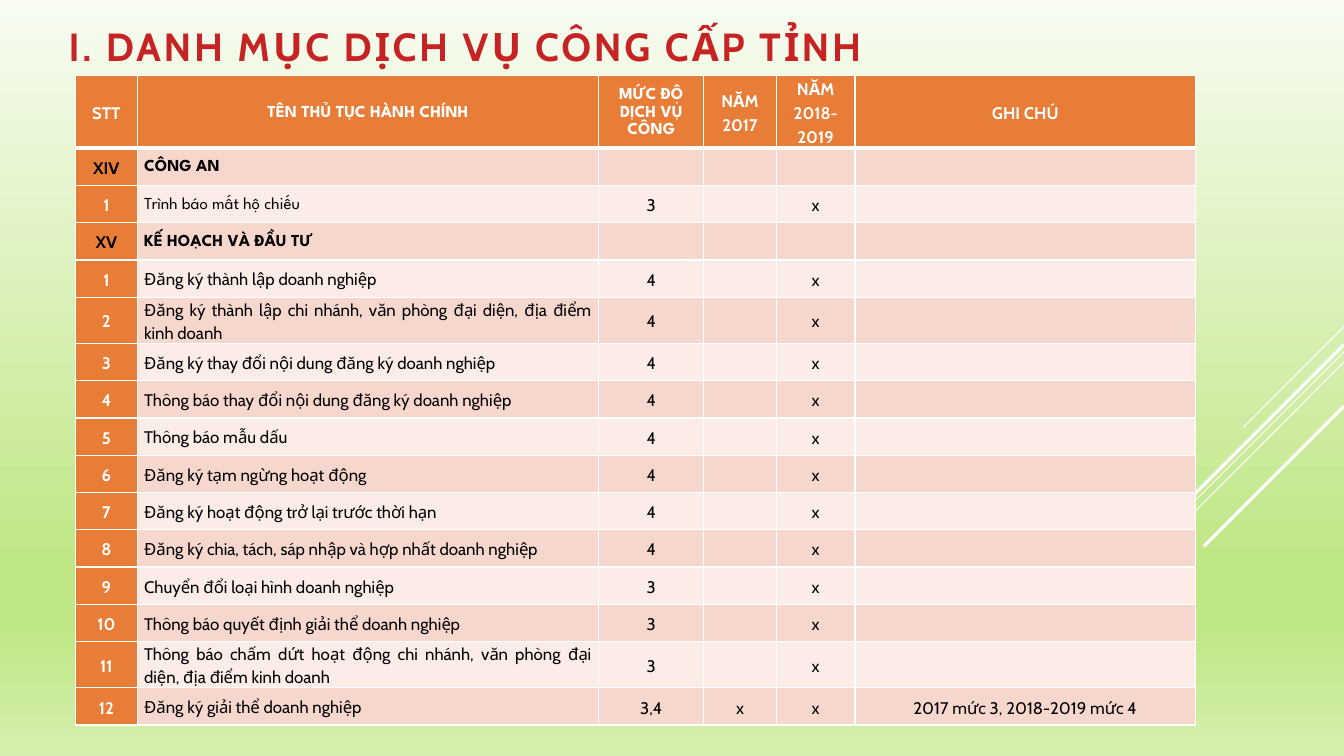
from pptx import Presentation
from pptx import util as u
from pptx.dml.color import RGBColor
from pptx.enum import shapes, text
from pptx.oxml import parse_xml
from pptx.oxml.ns import nsdecls, qn

PX = 9144  # 100 px to the inch
WHITE = RGBColor(0xFF, 0xFF, 0xFF)
BLACK = RGBColor(0, 0, 0)
RED = RGBColor(0xC6, 0x23, 0x24)
ORANGE = RGBColor(0xE8, 0x7D, 0x37)
ROSE = RGBColor(0xF6, 0xD7, 0xCE)
PALE = RGBColor(0xFB, 0xEC, 0xE8)
MIST = RGBColor(0xF8, 0xFC, 0xF2)
LIME = RGBColor(0xC0, 0xE7, 0x86)
LEAF = RGBColor(0xD5, 0xEF, 0xAE)
MID, JUST = text.PP_ALIGN.CENTER, text.PP_ALIGN.JUSTIFY
SANS, CAPS = "Cabin", "League Spartan"

# Formats: paragraph values and font values
TIGHT = {"alignment": MID, "line_spacing": 1.15}
GAP = {"space_before": u.Pt(6), "space_after": u.Pt(6)}
LOOSE = {**TIGHT, **GAP}
NAME = {"alignment": JUST, "line_spacing": u.Pt(16.5)}
LEAD = {**LOOSE, "alignment": JUST}
PLAIN = {"name": SANS, "size": u.Pt(12), "bold": False}
BOLD = {**PLAIN, "bold": True}

COLS = [61, 458, 104, 72, 78, 338]
HEAD = ["STT", "TÊN THỦ TỤC HÀNH CHÍNH", "MỨC ĐỘ DỊCH VỤ CÔNG",
        "NĂM 2017", "NĂM 2018-2019", "GHI CHÚ"]
ROWS = [
    ("XIV", "CÔNG AN"),
    ("1", "Trình báo mất hộ chiếu", "3", "", "x"),
    ("XV", "KẾ HOẠCH VÀ ĐẦU TƯ"),
    ("1", "Đăng ký thành lập doanh nghiệp", "4", "", "x"),
    ("2", "Đăng ký thành lập chi nhánh, văn phòng đại diện, địa điểm kinh doanh",
     "4", "", "x"),
    ("3", "Đăng ký thay đổi nội dung đăng ký doanh nghiệp", "4", "", "x"),
    ("4", "Thông báo thay đổi nội dung đăng ký doanh nghiệp", "4", "", "x"),
    ("5", "Thông báo mẫu dấu", "4", "", "x"),
    ("6", "Đăng ký tạm ngừng hoạt động", "4", "", "x"),
    ("7", "Đăng ký hoạt động trở lại trước thời hạn", "4", "", "x"),
    ("8", "Đăng ký chia, tách, sáp nhập và hợp nhất doanh nghiệp", "4", "", "x"),
    ("9", "Chuyển đổi loại hình doanh nghiệp", "3", "", "x"),
    ("10", "Thông báo quyết định giải thể doanh nghiệp", "3", "", "x"),
    ("11", "Thông báo chấm dứt hoạt động chi nhánh, văn phòng đại diện, "
           "địa điểm kinh doanh", "3", "", "x"),
    ("12", "Đăng ký giải thể doanh nghiệp", "3,4", "x", "x",
     "2017 mức 3, 2018-2019 mức 4"),
]


def apply(item, values):
    for key, value in values.items():
        setattr(item, key, value)


class Deck:
    def __init__(self, wide, high):
        self.prs = Presentation()
        self.prs.slide_width, self.prs.slide_height = wide * PX, high * PX
        self.slide = self.prs.slides.add_slide(self.prs.slide_layouts[5])

    def back(self, stops):
        self.slide.background.fill.gradient()
        grad = self.slide.element.xpath(".//a:gradFill")[0]
        marks = "".join(f'<a:gs pos="{pos * 1000}"><a:srgbClr val="{tint}"/></a:gs>'
                        for pos, tint in stops)
        grad.getparent().replace(grad, parse_xml(
            f'<a:gradFill {nsdecls("a")} rotWithShape="1"><a:gsLst>{marks}</a:gsLst>'
            '<a:lin ang="5400000" scaled="0"/></a:gradFill>'))

    def label(self, para, words, form, font, tint):
        apply(para, form)
        run = para.add_run()
        run.text = words
        apply(run.font, font)
        run.font.color.rgb = tint
        return run

    def title(self, words, left, top, wide, high):
        box = self.slide.shapes.title
        apply(box, {"left": left * PX, "top": top * PX,
                    "width": wide * PX, "height": high * PX})
        apply(box.text_frame, {"word_wrap": True,
                               "auto_size": text.MSO_AUTO_SIZE.NONE,
                               "vertical_anchor": text.MSO_ANCHOR.MIDDLE})
        run = self.label(box.text_frame.paragraphs[0], words,
                         {"alignment": text.PP_ALIGN.LEFT, "line_spacing": 0.9},
                         {**BOLD, "size": u.Pt(28)}, RED)
        run._r.get_or_add_rPr().set("spc", "200")

    def line(self, x1, y1, x2, y2, weight):
        bar = self.slide.shapes.add_connector(
            shapes.MSO_CONNECTOR.STRAIGHT, x1 * PX, y1 * PX, x2 * PX, y2 * PX)
        bar.line.color.rgb, bar.line.width = WHITE, u.Pt(weight)
        bar._element.spPr.append(parse_xml(f'<a:effectLst {nsdecls("a")}/>'))

    def grid(self, left, top, cols, rows):
        frame = self.slide.shapes.add_table(
            len(rows), len(cols), left * PX, top * PX, sum(cols) * PX, sum(rows) * PX)
        for col, wide in zip(frame.table.columns, cols):
            col.width = wide * PX
        for row, high in zip(frame.table.rows, rows):
            row.height = high * PX
        return frame.table

    def cell(self, cell, words, fill, edges, form, font, tint):
        apply(cell, {"margin_left": 7 * PX, "margin_right": 7 * PX,
                     "margin_top": 0, "margin_bottom": 0,
                     "vertical_anchor": text.MSO_ANCHOR.MIDDLE})
        cell.fill.solid()
        cell.fill.fore_color.rgb = fill
        if words:
            self.label(cell.text_frame.paragraphs[0], words, form, font, tint)
        props = cell._tc.find(qn("a:tcPr"))
        for spot, side in enumerate("LRTB"):
            props.insert(spot, parse_xml(
                f'<a:ln{side} {nsdecls("a")} w="{u.Pt(edges.get(side, 1))}"><a:solidFill>'
                f'<a:srgbClr val="{WHITE}"/></a:solidFill></a:ln{side}>'))


def main():
    deck = Deck(1333, 750)
    deck.back([(0, MIST), (74, LIME), (83, LIME), (100, LEAF)])

    # Diagonal lines at the right edge
    for y1, x2, y2, weight in [(324, 1233, 424, 0.75), (349, 1007, 675, 0.75),
                               (359, 1126, 567, 0.75), (342, 1142, 533, 2.25),
                               (403, 1194, 542, 2.25)]:
        deck.line(1333, y1, x2, y2, weight)

    deck.title("I. DANH MỤC DỊCH VỤ CÔNG CẤP TỈNH", 58, 22, 1113, 53)

    # Table: header row
    table = deck.grid(75, 75, COLS, [72] + [37] * len(ROWS))
    for c, words in enumerate(HEAD):
        font = {**BOLD, "name": CAPS if c in (1, 2) else SANS}
        deck.cell(table.cell(0, c), words, ORANGE, {"B": 3}, TIGHT, font, WHITE)

    # Table: section and service rows
    for r, row in enumerate(ROWS, 1):
        part = len(row) == 2
        edges = {"T": 3} if r == 1 else {}
        band = ROSE if r % 2 else PALE
        for c in range(len(COLS)):
            words = row[c] if c < len(row) else ""
            fill, form, font, tint = band, TIGHT, PLAIN, BLACK
            if c == 0:
                fill, form, font = ORANGE, LOOSE, BOLD
                tint = BLACK if part else WHITE
            elif c == 1:
                lead = r <= 3
                form = LEAD if lead else NAME
                font = {**PLAIN, "name": CAPS if lead else SANS, "bold": part}
            deck.cell(table.cell(r, c), words, fill, edges, form, font, tint)

    deck.prs.save("out.pptx")


if __name__ == "__main__":
    main()
